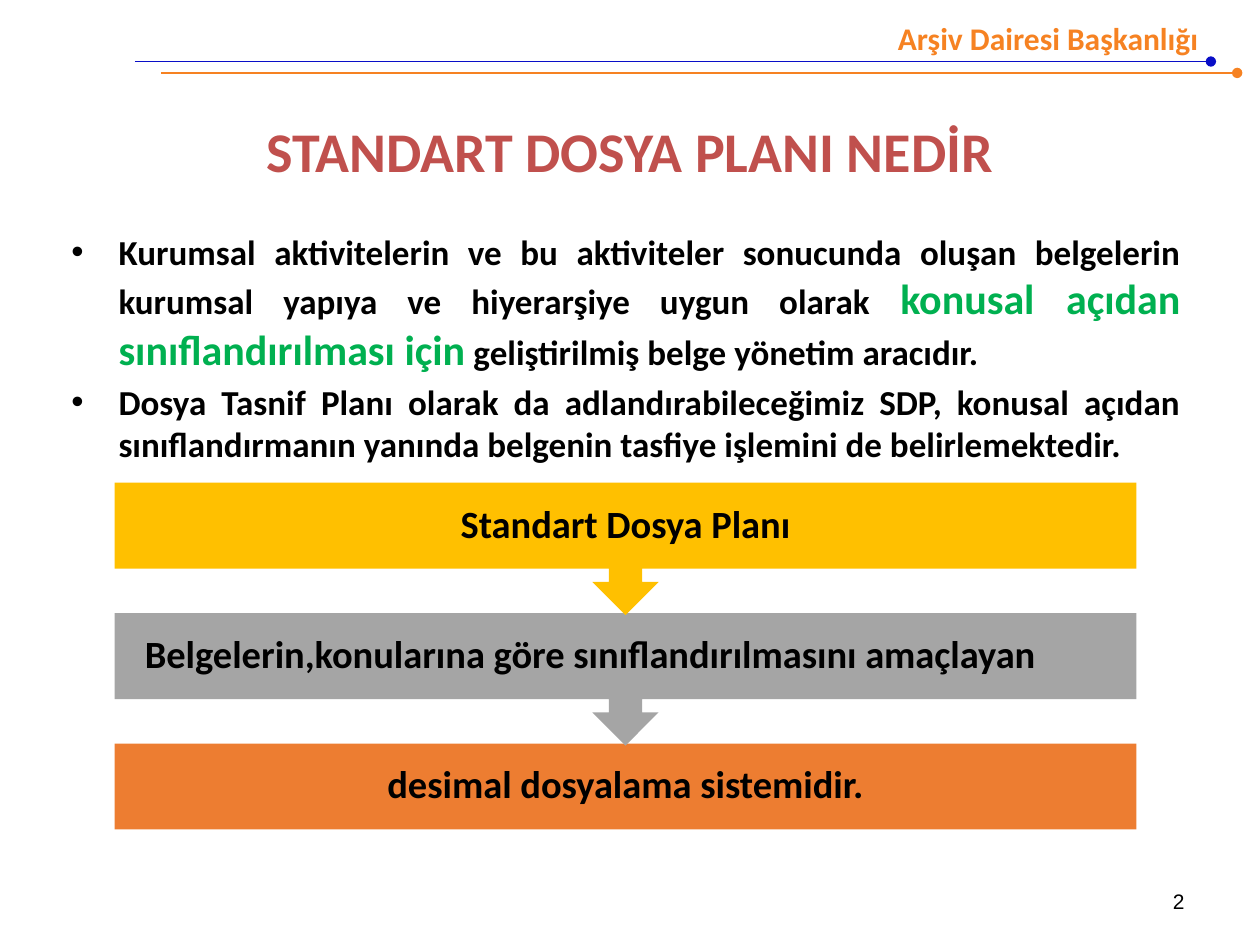
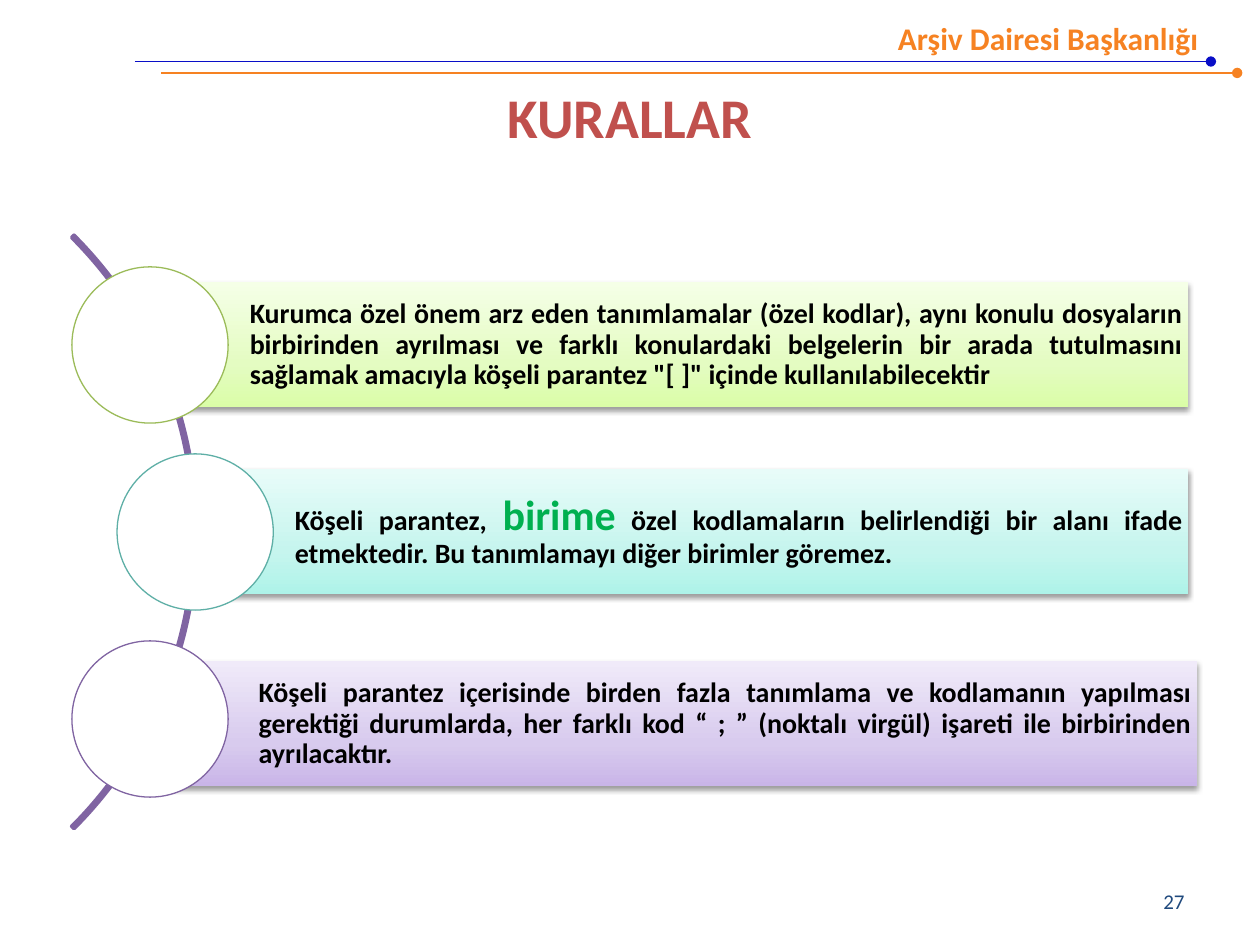
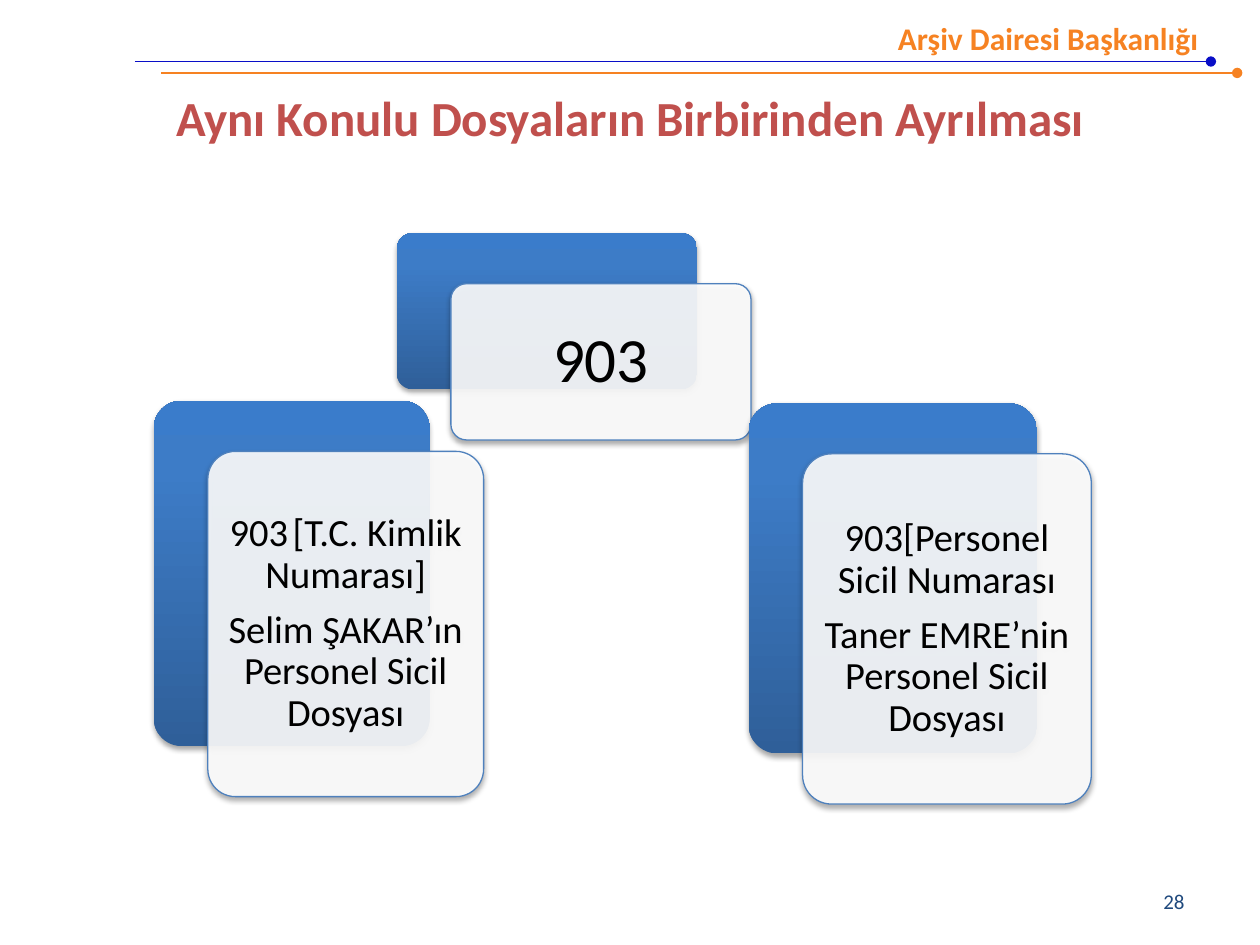
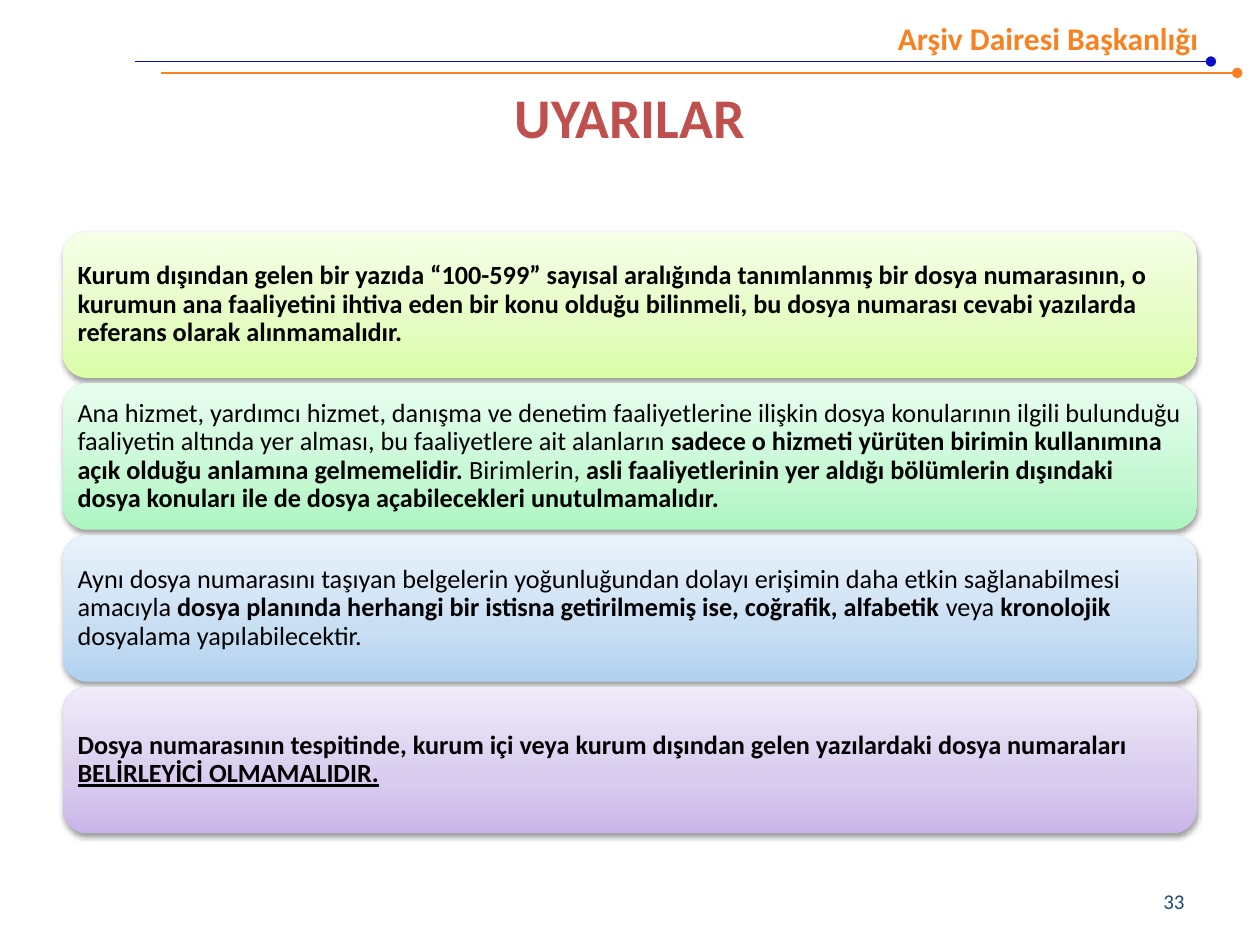
from dataclasses import dataclass
from typing import NamedTuple

from lxml import etree
from pptx import Presentation
from pptx.dml.color import RGBColor
from pptx.enum import shapes, text
from pptx.oxml.ns import qn
from pptx.util import Cm, Pt

SHAPE = shapes.MSO_SHAPE
ALIGN = text.PP_ALIGN
ANCHOR = text.MSO_ANCHOR


@dataclass(frozen=True)
class Theme:
    font: str = "Calibri"
    number_font: str = "Arial"
    black: str = "000000"
    white: str = "FFFFFF"
    title: str = "C0504D"
    emphasis: str = "00B050"
    orange: str = "F68222"
    blue: str = "090EC7"
    navy: str = "1F497D"
    card_line: str = "4F81BD"
    purple: str = "8064A2"
    olive: str = "9BBB59"
    teal: str = "5EAFA6"
    steps: tuple = ("FFC000", "A5A5A5", "ED7D31")
    # Gradient stops run from bottom to top
    lime_grad: tuple = ((0, "DAFDA7"), (35, "E4FCC2"), (100, "F5FFE7"))
    aqua_grad: tuple = ((0, "AEF3E9"), (35, "C6F5EE"), (100, "E8FCF9"))
    mint_grad: tuple = ((0, "ACF6C1"), (35, "C5F8D3"), (100, "E8FDEE"))
    sky_grad: tuple = ((0, "B0D1EF"), (35, "C8DEF3"), (100, "E9F2FB"))
    lilac_grad: tuple = ((0, "C9B5E8"), (35, "D8CBEE"), (100, "F0EAF9"))
    card_grad: tuple = ((0, "2F5F99"), (80, "3D7CC7"), (100, "3A7CCB"))
    title_size: int = 32
    long_title_size: int = 28
    code_size: int = 36
    accent_size: int = 24
    card_size: int = 22
    body_size: int = 20
    header_size: int = 18
    rule_size: int = 16
    warning_size: int = 15
    number_size: int = 12


T = Theme()


class Box(NamedTuple):
    """A rectangle in centimetres."""
    left: float
    top: float
    width: float
    height: float

    def emu(self):
        return [Cm(v) for v in self]


TITLE_BOX = Box(1.27, 0.76, 22.86, 3.18)
LOW_TITLE_BOX = Box(1.27, 1.52, 22.86, 3.4)


def sub(parent, tag, **attrs):
    return etree.SubElement(parent, qn(tag), {k: str(v) for k, v in attrs.items()})


def write(sp, paragraphs, size, color=T.black, bold=False, font=T.font, align=ALIGN.LEFT,
          anchor=ANCHOR.MIDDLE, insets=(0.25, 0.13, 0.25, 0.13), line=None, before=0,
          after=0, bullet=None, indent=0.0):
    """Fill a shape; a paragraph is a string or a list of strings and (string, changes)."""
    tf = sp.text_frame
    tf.word_wrap = True
    tf.auto_size = text.MSO_AUTO_SIZE.NONE
    tf.vertical_anchor = anchor
    tf.margin_left, tf.margin_top, tf.margin_right, tf.margin_bottom = map(Cm, insets)
    for i, runs in enumerate(paragraphs):
        p = tf.add_paragraph() if i else tf.paragraphs[0]
        if bullet:
            pPr = p._p.get_or_add_pPr()
            pPr.set("marL", str(Cm(indent)))
            pPr.set("indent", str(-Cm(indent)))
            sub(pPr, "a:buFont", typeface="Arial")
            sub(pPr, "a:buChar", char=bullet)
        p.alignment = align
        if line:
            p.line_spacing = line
        p.space_before = Pt(before if i else 0)
        p.space_after = Pt(after)
        for run in [runs] if isinstance(runs, str) else runs:
            words, changes = (run, {}) if isinstance(run, str) else run
            style = {"size": size, "color": color, "bold": bold, "underline": False, **changes}
            r = p.add_run()
            r.text = words
            r.font.name = font
            r.font.size = Pt(style["size"])
            r.font.bold = style["bold"]
            r.font.underline = style["underline"]
            r.font.color.rgb = RGBColor.from_string(style["color"])


def write_diagram(sp, paragraphs, size, **fmt):
    """Text as the diagrams set it: tight lines, space after by type size."""
    write(sp, paragraphs, size, line=0.9, after=round(size * 0.35, 1), **fmt)


def add_text(slide, box, paragraphs, size, **fmt):
    sp = slide.shapes.add_textbox(*box.emu())
    write(sp, paragraphs, size, **fmt)


def add_shape(slide, kind, box, fill=None, grad=None, alpha=None, line=None, weight=0.75,
              shadow=None):
    """Add a preset shape; shadow is (opacity in percent, distance in points)."""
    sp = slide.shapes.add_shape(kind, *box.emu())
    if grad:
        sp.fill.gradient()
        fill_xml = sp.element.spPr.find(qn("a:gradFill"))
        fill_xml.clear()
        stops = sub(fill_xml, "a:gsLst")
        for pos, color in grad:
            sub(sub(stops, "a:gs", pos=pos * 1000), "a:srgbClr", val=color)
        sub(fill_xml, "a:lin", ang=270 * 60000, scaled=0)
    elif fill:
        sp.fill.solid()
        sp.fill.fore_color.rgb = RGBColor.from_string(fill)
        if alpha:
            color_xml = sp.element.spPr.find(qn("a:solidFill"))[0]
            sub(color_xml, "a:alpha", val=alpha * 1000)
    else:
        sp.fill.background()
    if line:
        sp.line.color.rgb = RGBColor.from_string(line)
        sp.line.width = Pt(weight)
    else:
        sp.line.fill.background()
    sp.shadow.inherit = False
    if shadow:
        opacity, distance = shadow
        effects = sp.element.spPr.find(qn("a:effectLst"))
        shade = sub(effects, "a:outerShdw", blurRad=Pt(3.1), dist=Pt(distance),
                    dir=90 * 60000, rotWithShape=0)
        sub(sub(shade, "a:srgbClr", val=T.black), "a:alpha", val=opacity * 1000)
    return sp


def add_header_line(slide, left, top, width, color):
    cx = slide.shapes.add_connector(shapes.MSO_CONNECTOR.STRAIGHT, Cm(left), Cm(top),
                                    Cm(left + width), Cm(top))
    cx.line.color.rgb = RGBColor.from_string(color)
    cx.line.width = Pt(0.75)
    spPr = cx.element.spPr
    sub(spPr.find(qn("a:ln")), "a:tailEnd", type="oval")
    sub(spPr, "a:effectLst")


def add_header(slide, box):
    add_header_line(slide, box.left + 0.53, box.top + 1.22, 21.69, T.orange)
    add_header_line(slide, box.left, box.top + 0.99, 21.69, T.blue)
    label = Box(box.left + box.width - 8.13, box.top, 8.13, 1.02)
    add_text(slide, label, ["Arşiv Dairesi Başkanlığı"], T.header_size, color=T.orange,
             bold=True, align=ALIGN.RIGHT, anchor=ANCHOR.TOP)


def share_header(prs, layout):
    """Draw the header once and keep it on the layout in place of its footers."""
    for ph in list(layout.placeholders)[1:]:
        ph.element.getparent().remove(ph.element)
    slide = prs.slides[0]
    add_header(slide, Box(2.72, 0.25, 21.69, 1.22))
    for sp in list(slide.shapes)[1:]:
        layout.shapes.element.append(sp.element)


def start_slide(prs, layout, title, size=T.title_size, box=TITLE_BOX, lift=0.0):
    slide = prs.slides.add_slide(layout)
    if len(prs.slides) == 1:
        share_header(prs, layout)
    ph = slide.shapes.title
    ph.left, ph.top, ph.width, ph.height = box.emu()
    write(ph, [title], size, color=T.title, bold=True, align=ALIGN.CENTER,
          insets=(0.25, 0.13, 0.25, 0.13 + 2 * lift))
    return slide


def add_number(slide, number, color=T.navy, font=T.font):
    add_text(slide, Box(18.21, 17.65, 5.92, 1.02), [str(number)], T.number_size,
             color=color, font=font, align=ALIGN.RIGHT)


def add_steps(slide, box, steps):
    """Stack bars that point down to the next one."""
    pitch, bar, callout = 2.63, 1.73, 2.67
    for i in reversed(range(len(steps))):
        words, align, left_inset = steps[i]
        last = i == len(steps) - 1
        sp = add_shape(slide, SHAPE.RECTANGLE if last else SHAPE.DOWN_ARROW_CALLOUT,
                       Box(box.left, box.top + i * pitch, box.width, bar if last else callout),
                       fill=T.steps[i])
        write_diagram(sp, [words], T.card_size, bold=True, align=align,
                      insets=(left_inset, 0.43, 0.43, 0.43))


def add_rules(slide, box, rules):
    """Set circles along an arc, each with a bar of text starting at its centre."""
    circle, bar, pitch, arc = 3.15, 2.52, 3.77, 16.92
    middle = box.top + box.height / 2
    sp = add_shape(slide, SHAPE.BLOCK_ARC,
                   Box(box.left - 14.4, middle - arc / 2, arc, arc), line=T.purple, weight=2)
    for i, value in enumerate((189, 27, 0.004)):
        sp.adjustments[i] = value
    for i, (runs, grad, line, indent, dx, dy) in enumerate(rules):
        left, top = box.left + indent, box.top + i * pitch
        bar_left = left + circle / 2
        sp = add_shape(slide, SHAPE.RECTANGLE,
                       Box(bar_left + dx, top + (circle - bar) / 2 + dy,
                           box.left + box.width - bar_left, bar),
                       grad=grad, shadow=(38, 1.6))
        write_diagram(sp, [runs], T.rule_size, bold=True, align=ALIGN.JUSTIFY,
                      insets=(2.01, 0.1, 0.1, 0.1))
        add_shape(slide, SHAPE.OVAL, Box(left, top, circle, circle), fill=T.white, line=line)


def add_card(slide, box, paragraphs, size, inset):
    """A blue panel with a translucent text panel shifted over it."""
    front = box._replace(left=box.left + 1.09, top=box.top + 1.02)
    back_sp = add_shape(slide, SHAPE.ROUNDED_RECTANGLE, box, grad=T.card_grad, shadow=(35, 1.8))
    front_sp = add_shape(slide, SHAPE.ROUNDED_RECTANGLE, front, fill=T.white, alpha=90,
                         line=T.card_line, shadow=(35, 1.8))
    for sp in (back_sp, front_sp):
        sp.adjustments[0] = 0.1
    write_diagram(front_sp, paragraphs, size, align=ALIGN.CENTER, insets=(inset,) * 4)


def add_warnings(slide, box, warnings):
    gap = 0.11
    height = (box.height - gap * (len(warnings) - 1)) / len(warnings)
    for i, (runs, grad) in enumerate(warnings):
        sp = add_shape(slide, SHAPE.ROUNDED_RECTANGLE,
                       Box(box.left, box.top + i * (height + gap), box.width, height),
                       grad=grad, shadow=(38, 1.6))
        write_diagram(sp, [runs], T.warning_size, insets=(0.15,) * 4)


def build_definition(prs, layout):
    slide = start_slide(prs, layout, "STANDART DOSYA PLANI NEDİR", box=LOW_TITLE_BOX, lift=0.2)
    add_text(slide, Box(1.19, 4.52, 22.86, 12.57), [
        ["Kurumsal aktivitelerin ve bu aktiviteler sonucunda oluşan belgelerin kurumsal "
         "yapıya ve hiyerarşiye uygun olarak ",
         ("konusal açıdan sınıflandırılması için",
          {"size": T.accent_size, "color": T.emphasis}),
         " geliştirilmiş belge yönetim aracıdır."],
        "Dosya Tasnif Planı olarak da adlandırabileceğimiz SDP, konusal açıdan "
        "sınıflandırmanın yanında belgenin tasfiye işlemini de belirlemektedir.",
    ], T.body_size, bold=True, align=ALIGN.JUSTIFY, anchor=ANCHOR.TOP, before=4,
        bullet="•", indent=0.95)
    add_number(slide, 2, color=T.black, font=T.number_font)
    add_steps(slide, Box(2.31, 9.73, 20.6, 7), [
        ("Standart Dosya Planı", ALIGN.CENTER, 0.43),
        ("Belgelerin,konularına göre sınıflandırılmasını amaçlayan", ALIGN.LEFT, 0.61),
        ("desimal dosyalama sistemidir.", ALIGN.CENTER, 0.43),
    ])


def build_rules(prs, layout):
    slide = start_slide(prs, layout, "KURALLAR")
    add_rules(slide, Box(1.45, 5.38, 22.5, 10.69), [
        ("Kurumca özel önem arz eden tanımlamalar (özel kodlar), aynı konulu dosyaların "
         "birbirinden ayrılması ve farklı konulardaki belgelerin bir arada tutulmasını "
         "sağlamak amacıyla köşeli parantez \"[ ]\" içinde kullanılabilecektir",
         T.lime_grad, T.olive, 0, 0, 0),
        (["Köşeli parantez, ",
          ("birime", {"size": T.accent_size, "color": T.emphasis}),
          " özel kodlamaların belirlendiği bir alanı ifade etmektedir. Bu tanımlamayı "
          "diğer birimler göremez."],
         T.aqua_grad, T.teal, 0.91, 0, 0),
        ("Köşeli parantez içerisinde birden fazla tanımlama ve kodlamanın yapılması "
         "gerektiği durumlarda, her farklı kod “ ; ” (noktalı virgül) işareti ile "
         "birbirinden ayrılacaktır.",
         T.lilac_grad, T.purple, 0, 0.18, 0.1),
    ])
    add_number(slide, 27)


def build_separation(prs, layout):
    slide = start_slide(prs, layout, "Aynı Konulu Dosyaların Birbirinden Ayrılması",
                        size=T.long_title_size)
    add_card(slide, Box(8, 4.7, 6.05, 3.15), ["903"], T.code_size, 0.38)
    add_card(slide, Box(3.1, 8.08, 5.56, 6.96),
             ["903\t[T.C. Kimlik Numarası]", "Selim ŞAKAR’ın Personel Sicil Dosyası"],
             T.card_size, 0.23)
    add_card(slide, Box(15.09, 8.13, 5.82, 7.06),
             ["903[Personel Sicil Numarası", "Taner EMRE’nin Personel Sicil Dosyası"],
             T.card_size, 0.23)
    add_number(slide, 28)


def build_warnings(prs, layout):
    bold = {"bold": True}
    slide = start_slide(prs, layout, "UYARILAR")
    add_warnings(slide, Box(1.27, 4.67, 22.86, 12.13), [
        ([("Kurum dışından gelen bir yazıda “100-599” sayısal aralığında tanımlanmış bir "
           "dosya numarasının, o kurumun ana faaliyetini ihtiva eden bir konu olduğu "
           "bilinmeli, bu dosya numarası cevabi yazılarda referans olarak alınmamalıdır.",
           bold)], T.lime_grad),
        (["Ana hizmet, yardımcı hizmet, danışma ve denetim faaliyetlerine ilişkin dosya "
          "konularının ilgili bulunduğu faaliyetin altında yer alması, bu faaliyetlere ait "
          "alanların ",
          ("sadece o hizmeti yürüten birimin kullanımına açık olduğu anlamına "
           "gelmemelidir. ", bold),
          "Birimlerin, ",
          ("asli faaliyetlerinin yer aldığı bölümlerin dışındaki dosya konuları ile de "
           "dosya açabilecekleri unutulmamalıdır.", bold)], T.mint_grad),
        (["Aynı dosya numarasını taşıyan belgelerin yoğunluğundan dolayı erişimin daha "
          "etkin sağlanabilmesi amacıyla ",
          ("dosya planında herhangi bir istisna getirilmemiş ise, coğrafik, alfabetik", bold),
          " veya ",
          ("kronolojik ", bold),
          "dosyalama yapılabilecektir."], T.sky_grad),
        ([("Dosya numarasının tespitinde, kurum içi veya kurum dışından gelen yazılardaki "
           "dosya numaraları ", bold),
          ("BELİRLEYİCİ OLMAMALIDIR.", {"bold": True, "underline": True})], T.lilac_grad),
    ])
    add_number(slide, 33)


def main():
    prs = Presentation()
    prs.slide_width, prs.slide_height = Cm(25.4), Cm(19.05)
    layout = prs.slide_layouts[5]
    for build in (build_definition, build_rules, build_separation, build_warnings):
        build(prs, layout)
    prs.save("out.pptx")


if __name__ == "__main__":
    main()
